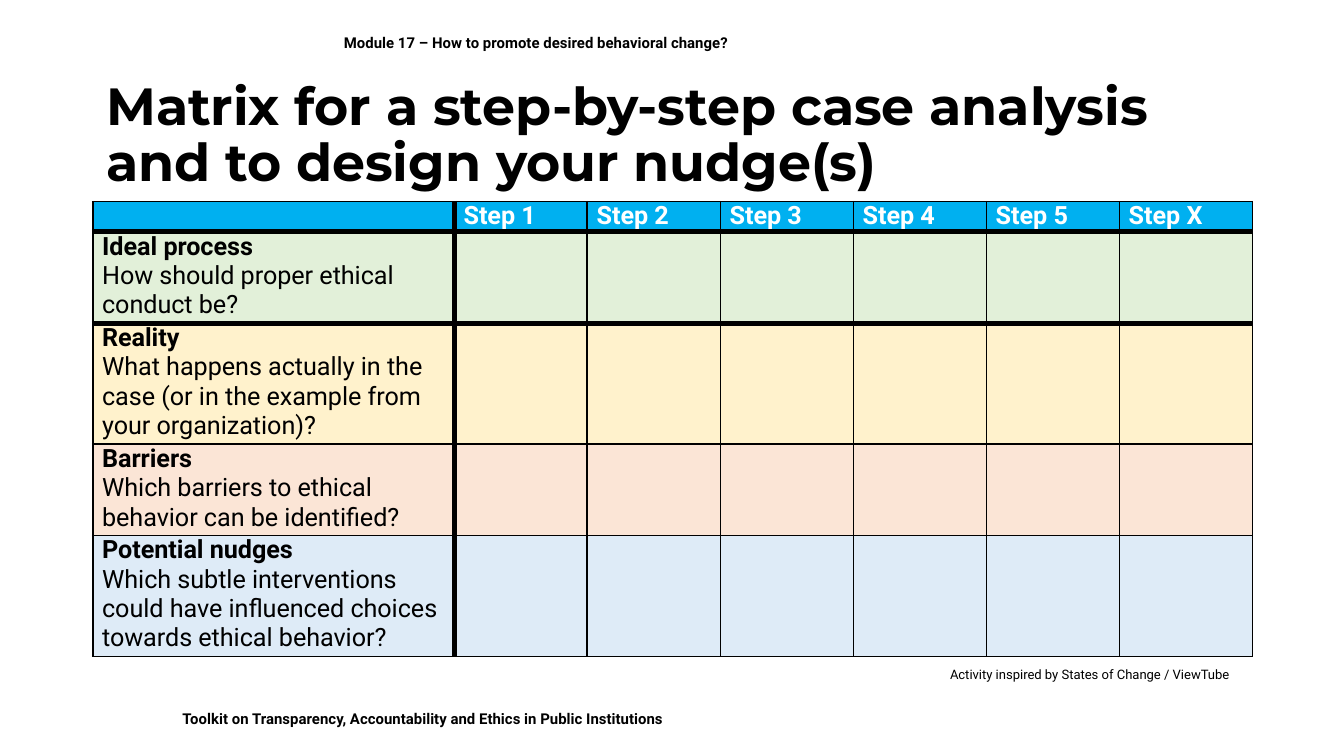
"""Build the slide with the step-by-step matrix for designing nudges."""
from lxml.etree import SubElement
from pptx import Presentation
from pptx.dml.color import RGBColor as RGB
from pptx.enum.text import MSO_ANCHOR as Anchor, PP_ALIGN as Align
from pptx.oxml.ns import qn
from pptx.util import Inches, Pt

COLORS = {
    "black": "000000", "white": "FFFFFF", "head": "00B0F0", "ideal": "E2F0D9",
    "real": "FFF2CC", "bars": "FBE5D6", "nudge": "DEEBF7",
}
STEPS = ["Step 1", "Step 2", "Step 3", "Step 4", "Step 5", "Step X"]
ROWS = [
    ("ideal", 0.68, "Ideal process", "How should proper ethical conduct be?"),
    ("real", 0.9, "Reality",
     "What happens actually in the case (or in the example from your organization)?"),
    ("bars", 0.68, "Barriers", "Which barriers to ethical behavior can be identified?"),
    ("nudge", 0.9, "Potential nudges",
     "Which subtle interventions could have influenced choices towards ethical behavior?"),
]
SIZE = 13.5


def style(para, size, bold=False, color="black", face="Roboto"):
    """Set the font of a paragraph."""
    font = para.font
    font.name, font.size, font.bold = face, Pt(size), bold
    font.color.rgb = RGB.from_string(COLORS[color])


def add_text(slide, box, text, size, bold=False, anchor=Anchor.TOP):
    """Add a one-paragraph text box and return it."""
    shape = slide.shapes.add_textbox(*map(Inches, box))
    frame = shape.text_frame
    frame.word_wrap, frame.vertical_anchor = True, anchor
    frame.text = text
    style(frame.paragraphs[0], size, bold)
    return shape


def add_title(slide, text):
    """Place and format the title."""
    title = slide.shapes.title
    title.left, title.top, title.width, title.height = map(Inches, (0.69, 0.64, 8.62, 0.75))
    frame = title.text_frame
    frame.text, frame.word_wrap = text, True
    frame.vertical_anchor = Anchor.MIDDLE
    para = frame.paragraphs[0]
    para.alignment, para.line_spacing = Align.LEFT, 0.9
    style(para, 28, True, face="Montserrat")


def add_edge(cell, side, width):
    """Draw one border of a cell."""
    props = cell._tc.get_or_add_tcPr()
    line = SubElement(props, qn(f"a:ln{side}"), w=str(Pt(width)))
    fill = SubElement(line, qn("a:solidFill"))
    SubElement(fill, qn("a:srgbClr"), val=COLORS["black"])


def fill_cell(cell, row, col, lines, color, ink):
    """Fill a cell with borders, colour and text, the first line in bold."""
    cell.margin_left = cell.margin_right = Inches(0.07)
    cell.margin_top = cell.margin_bottom = 0
    thick = {"L": col == 1, "R": col == 0, "T": row in (1, 2), "B": row in (0, 1)}
    for side, heavy in thick.items():
        add_edge(cell, side, 3 if heavy else 1)
    cell.fill.solid()
    cell.fill.fore_color.rgb = RGB.from_string(COLORS[color])
    frame = cell.text_frame
    frame.text = "\n".join(lines)
    for i, para in enumerate(frame.paragraphs):
        style(para, SIZE, i == 0, ink)
        if not lines:
            SubElement(para._p, qn("a:endParaRPr"), sz=str(int(SIZE * 100)))


def add_matrix(slide):
    """Add the table of steps and questions."""
    count = len(STEPS)
    box = map(Inches, (0.69, 1.5, 8.62, 3.38))
    table = slide.shapes.add_table(len(ROWS) + 1, count + 1, *box).table
    for col, wide in enumerate([2.69] + [0.99] * count):
        table.columns[col].width = Inches(wide)
    table.rows[0].height = Inches(0.22)
    for col, step in enumerate([None] + STEPS):
        fill_cell(table.cell(0, col), 0, col, [step] if step else [], "head", "white")
    for row, (color, high, *lines) in enumerate(ROWS, 1):
        table.rows[row].height = Inches(high)
        for col in range(count + 1):
            fill_cell(table.cell(row, col), row, col, [] if col else lines, color, "black")


def main():
    """Build and save the slide."""
    deck = Presentation()
    deck.slide_width = Inches(10)
    deck.slide_height = deck.slide_width * 9 // 16
    slide = deck.slides.add_slide(deck.slide_layouts[5])
    foot = add_text(slide, (1.26, 5.23, 7.17, 0.24),
                    "Toolkit on Transparency, Accountability and Ethics in Public Institutions",
                    8, True)
    foot.fill.solid()
    foot.fill.fore_color.rgb = RGB.from_string(COLORS["white"])
    foot.text_frame.paragraphs[0].space_after = Pt(18)
    add_matrix(slide)
    add_text(slide, (2.46, 0.1, 6.85, 0.44),
             "Module 17 – How to promote desired behavioral change?", 8, True, Anchor.MIDDLE)
    add_title(slide, "Matrix for a step-by-step case analysis and to design your nudge(s)")
    add_text(slide, (6.97, 4.91, 2.35, 0.22),
             "Activity inspired by States of Change / ViewTube", 7)
    deck.save("out.pptx")


if __name__ == "__main__":
    main()
